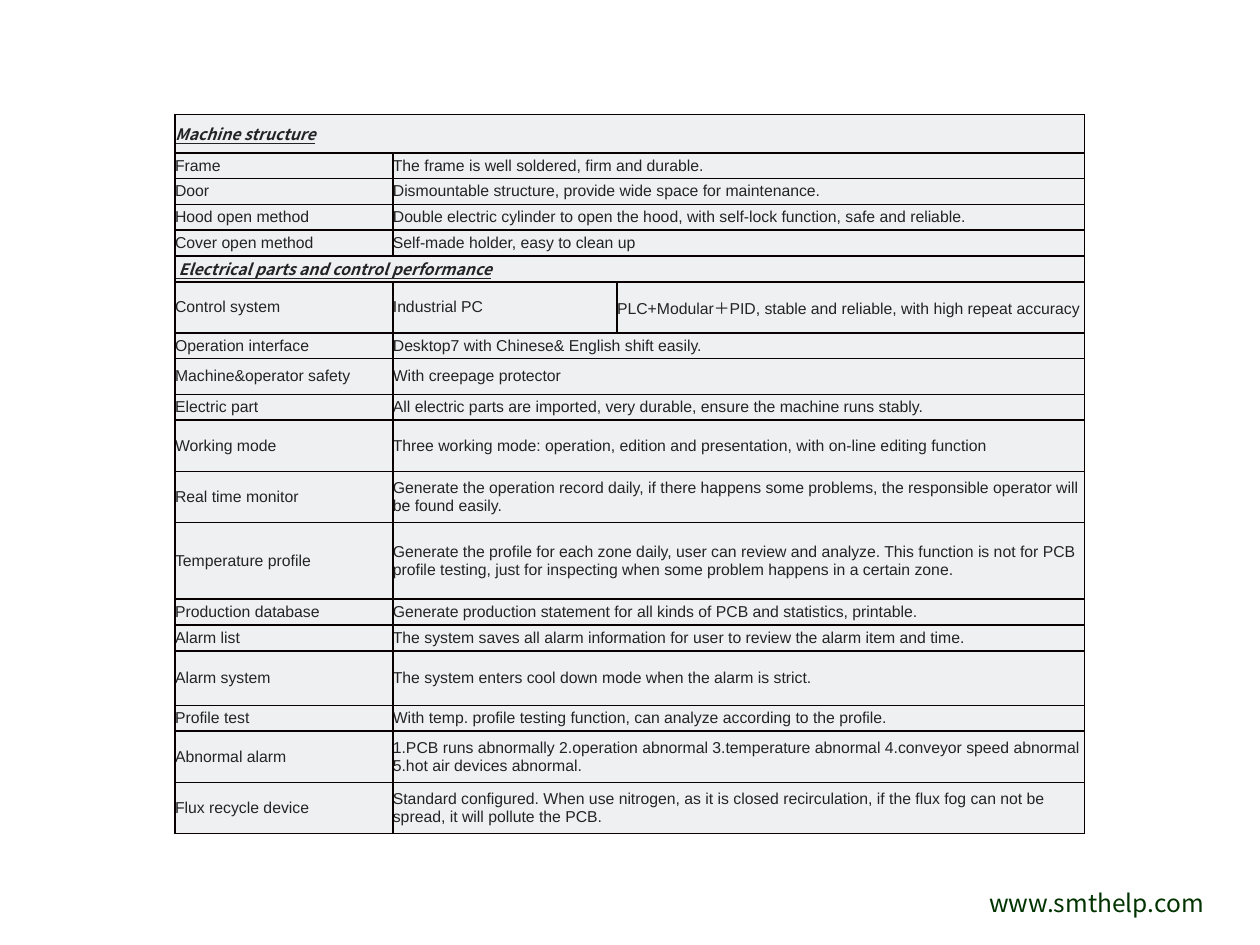
from pptx import Presentation
from pptx.dml.color import RGBColor
from pptx.enum.text import MSO_ANCHOR
from pptx.oxml import parse_xml
from pptx.oxml.ns import nsdecls
from pptx.util import Cm, Pt

COLORS = {"text": "242424", "fill": "EFF0F2", "border": "080000", "site": "003300"}
BODY = {"name": "Arial", "size": Pt(9), "bold": False, "italic": False, "underline": False}
HEADING = {"name": "Noto Sans CJK SC", "size": Pt(9), "bold": True, "italic": True, "underline": True}
SITE = {"name": "Noto Sans CJK SC", "size": Pt(14)}
CELL = {"margin_left": 0, "margin_right": 0, "margin_top": 0, "margin_bottom": 0,
        "vertical_anchor": MSO_ANCHOR.MIDDLE}

COLUMNS = [4.39, 4.52, 9.42]
LINE, DOUBLE = 0.52, 1.03
ROWS = [
    (0.77, "Machine structure"),
    (LINE, "Frame", "The frame is well soldered, firm and durable."),
    (LINE, "Door", "Dismountable structure, provide wide space for maintenance."),
    (LINE, "Hood open method",
     "Double electric cylinder to open the hood, with self-lock function, safe and reliable."),
    (LINE, "Cover open method", "Self-made holder, easy to clean up"),
    (LINE, " Electrical parts and control performance"),
    (DOUBLE, "Control system", "Industrial PC",
     "PLC+Modular＋PID, stable and reliable, with high repeat accuracy"),
    (LINE, "Operation interface", "Desktop7 with Chinese& English shift easily."),
    (0.72, "Machine&operator safety", "With creepage protector"),
    (LINE, "Electric part",
     "All electric parts are imported, very durable, ensure the machine runs stably."),
    (DOUBLE, "Working mode",
     "Three working mode: operation, edition and presentation, with on-line editing function"),
    (DOUBLE, "Real time monitor",
     "Generate the operation record daily, if there happens some problems, "
     "the responsible operator will be found easily."),
    (1.55, "Temperature profile",
     "Generate the profile for each zone daily, user can review and analyze. This function is not "
     "for PCB profile testing, just for inspecting when some problem happens in a certain zone."),
    (LINE, "Production database",
     "Generate production statement for all kinds of PCB and statistics, printable."),
    (LINE, "Alarm list",
     "The system saves all alarm information for user to review the alarm item and time."),
    (1.1, "Alarm system", "The system enters cool down mode when the alarm is strict."),
    (LINE, "Profile test",
     "With temp. profile testing function, can analyze according to the profile."),
    (DOUBLE, "Abnormal alarm",
     "1.PCB runs abnormally 2.operation abnormal 3.temperature abnormal "
     "4.conveyor speed abnormal 5.hot air devices abnormal."),
    (DOUBLE, "Flux recycle device",
     "Standard configured. When use nitrogen, as it is closed recirculation, "
     "if the flux fog can not be spread, it will pollute the PCB."),
]


class SlideBuilder:
    """Holds the style and the current slide, and adds elements to it."""

    def __init__(self, page, colors):
        self.page = page
        self.colors = colors

    def add_span(self, frame, text, style, color):
        span = frame.paragraphs[0].add_run()
        span.text = text
        for name, value in style.items():
            setattr(span.font, name, value)
        span.font.color.rgb = RGBColor.from_string(self.colors[color])

    def text(self, left, top, width, height, text, style, color):
        box = self.page.shapes.add_textbox(Cm(left), Cm(top), Cm(width), Cm(height))
        box.text_frame.word_wrap = True
        self.add_span(box.text_frame, text, style, color)

    def dress(self, cell):
        for name, value in CELL.items():
            setattr(cell, name, value)
        properties = cell._tc.get_or_add_tcPr()
        for side in "LRTB":
            properties.append(parse_xml(
                f'<a:ln{side} {nsdecls("a")} w="{Pt(1)}"><a:solidFill>'
                f'<a:srgbClr val="{self.colors["border"]}"/></a:solidFill></a:ln{side}>'))
        cell.fill.solid()
        cell.fill.fore_color.rgb = RGBColor.from_string(self.colors["fill"])

    def table(self, left, top, columns, rows):
        height = sum(row[0] for row in rows)
        frame = self.page.shapes.add_table(
            len(rows), len(columns), Cm(left), Cm(top), Cm(sum(columns)), Cm(height))
        table = frame.table
        table.first_row = table.horz_banding = False
        for column, width in zip(table.columns, columns):
            column.width = Cm(width)
        for index, (row_height, *texts) in enumerate(rows):
            row = table.rows[index]
            row.height = Cm(row_height)
            cells = list(row.cells)
            for cell in cells:
                self.dress(cell)
            if len(texts) < len(columns):
                cells[len(texts) - 1].merge(cells[-1])
            style = HEADING if len(texts) == 1 else BODY
            for cell, text in zip(cells, texts):
                self.add_span(cell.text_frame, text, style, "text")


def main():
    deck = Presentation()
    deck.slide_width, deck.slide_height = Cm(25.4), Cm(19.05)
    builder = SlideBuilder(deck.slides.add_slide(deck.slide_layouts[6]), COLORS)
    builder.text(19.69, 17.78, 5.74, 0.84, "www.smthelp.com", SITE, "site")
    builder.table(3.53, 2.31, COLUMNS, ROWS)
    deck.save("out.pptx")


if __name__ == "__main__":
    main()
